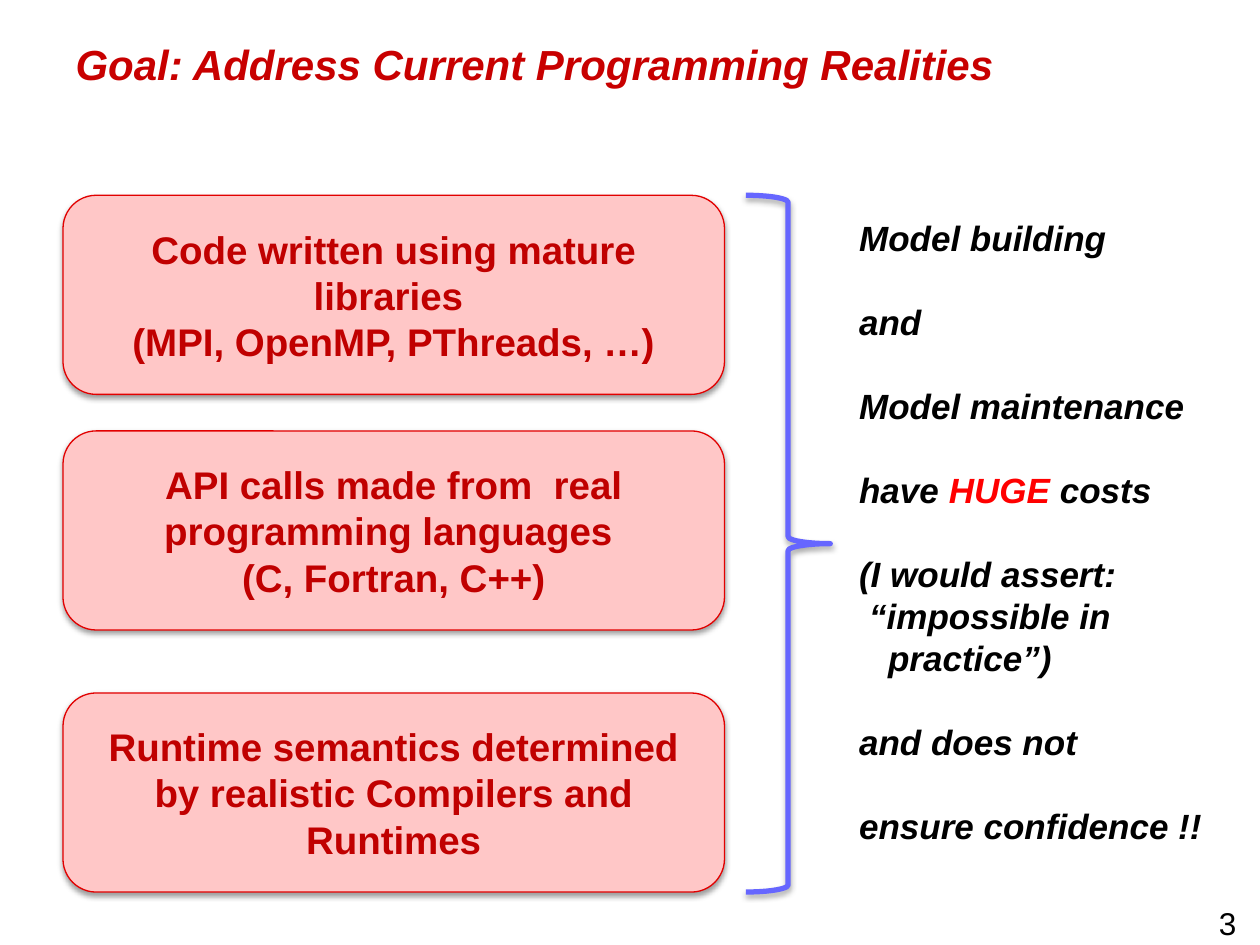
from lxml.etree import SubElement
from pptx import Presentation
from pptx.dml.color import RGBColor
from pptx.enum.shapes import MSO_SHAPE as Shape
from pptx.enum.text import MSO_ANCHOR as Anchor, PP_ALIGN as Align
from pptx.oxml.ns import qn
from pptx.util import Emu, Pt

PX = 9144
FONT = "Arial"
DARK_RED = "C00000"
BLACK = "000000"


def px(value):
    return Emu(value * PX)


def color(value):
    return RGBColor.from_string(value)


def place(shape, box):
    shape.left, shape.top, shape.width, shape.height = map(px, box)


def style_run(run, size, hue, bold=True, italic=False):
    font = run.font
    font.name, font.size, font.bold, font.italic = FONT, Pt(size), bold, italic
    font.color.rgb = color(hue)


def add_shadow(shape, opacity):
    shape.shadow.inherit = False
    effects = shape._element.spPr.find(qn("a:effectLst"))
    shadow = SubElement(effects, qn("a:outerShdw"), blurRad=str(Pt(3.1)),
                        dist=str(Pt(1.7)), dir="5400000", rotWithShape="0")
    hue = SubElement(shadow, qn("a:srgbClr"), val=BLACK)
    SubElement(hue, qn("a:alpha"), val=str(opacity * 1000))


def add_title(slide, box, text):
    title = slide.shapes.title
    place(title, box)
    frame = title.text_frame
    frame.text = text
    frame.vertical_anchor = Anchor.TOP
    paragraph = frame.paragraphs[0]
    paragraph.alignment = Align.LEFT
    paragraph.line_spacing = 0.9
    style_run(paragraph.runs[0], 24, "C80000", italic=True)


def add_card(slide, box, lines):
    card = slide.shapes.add_shape(Shape.ROUNDED_RECTANGLE, *map(px, box))
    card.fill.solid()
    card.fill.fore_color.rgb = color("FFC7C7")
    card.line.color.rgb = color("E20000")
    card.line.width = Pt(0.75)
    add_shadow(card, 38)
    frame = card.text_frame
    frame.text = "\n".join(lines)
    frame.word_wrap = True
    frame.vertical_anchor = Anchor.MIDDLE
    for paragraph in frame.paragraphs:
        paragraph.alignment = Align.CENTER
        paragraph.line_spacing = Pt(26.4)
        style_run(paragraph.runs[0], 22, DARK_RED)


def add_cards(slide, box, cards):
    left, top, width, height = box
    for offset, lines in cards:
        add_card(slide, (left, top + offset, width, height), lines)


def add_brace(slide, box):
    brace = slide.shapes.add_shape(Shape.RIGHT_BRACE, *map(px, box))
    brace.fill.background()
    brace.line.color.rgb = color("6666FF")
    brace.line.width = Pt(3)
    add_shadow(brace, 35)


def add_remarks(slide, box, remarks):
    frame = slide.shapes.add_textbox(*map(px, box)).text_frame
    frame.word_wrap = True
    for index, (gap, indent, parts) in enumerate(remarks):
        paragraph = frame.paragraphs[0] if index == 0 else frame.add_paragraph()
        paragraph.line_spacing = Pt(24)
        paragraph.space_before = Pt(gap)
        properties = paragraph._p.get_or_add_pPr()
        properties.set("marL", str(px(indent)))
        properties.set("indent", "0")
        for text in parts:
            run = paragraph.add_run()
            run.text = text
            style_run(run, 20, "FF0000" if text == "HUGE" else BLACK, italic=True)


def add_page_number(slide, box, number):
    frame = slide.shapes.add_textbox(*map(px, box)).text_frame
    frame.text = str(number)
    frame.word_wrap = True
    frame.vertical_anchor = Anchor.MIDDLE
    paragraph = frame.paragraphs[0]
    paragraph.alignment = Align.RIGHT
    style_run(paragraph.runs[0], 18, BLACK, bold=False)


def main():
    presentation = Presentation()
    presentation.slide_width, presentation.slide_height = px(1000), px(750)
    slide = presentation.slides.add_slide(presentation.slide_layouts[5])
    add_title(slide, (50, 30, 900, 87), "Goal: Address Current Programming Realities")
    add_cards(slide, (50, 155, 525, 158), [
        (0, ["Code written using mature libraries ",
             "(MPI, OpenMP, PThreads, …)"]),
        (187, ["API calls made from  real programming languages ",
               "(C, Fortran, C++)"]),
        (395, ["Runtime semantics determined by realistic Compilers and Runtimes"]),
    ])
    add_brace(slide, (592, 155, 67, 553))
    add_remarks(slide, (672, 167, 310, 515), [
        (0, 0, ["Model building"]),
        (24, 0, ["and"]),
        (24, 0, ["Model maintenance"]),
        (24, 0, ["have ", "HUGE", " costs"]),
        (24, 0, ["(I would assert:"]),
        (0, 8, ["“impossible in"]),
        (0, 23, ["practice”)"]),
        (24, 0, ["and does not"]),
        (24, 0, ["ensure confidence !!"]),
    ])
    add_page_number(slide, (783, 716, 208, 33), 3)
    presentation.save("out.pptx")


if __name__ == "__main__":
    main()
